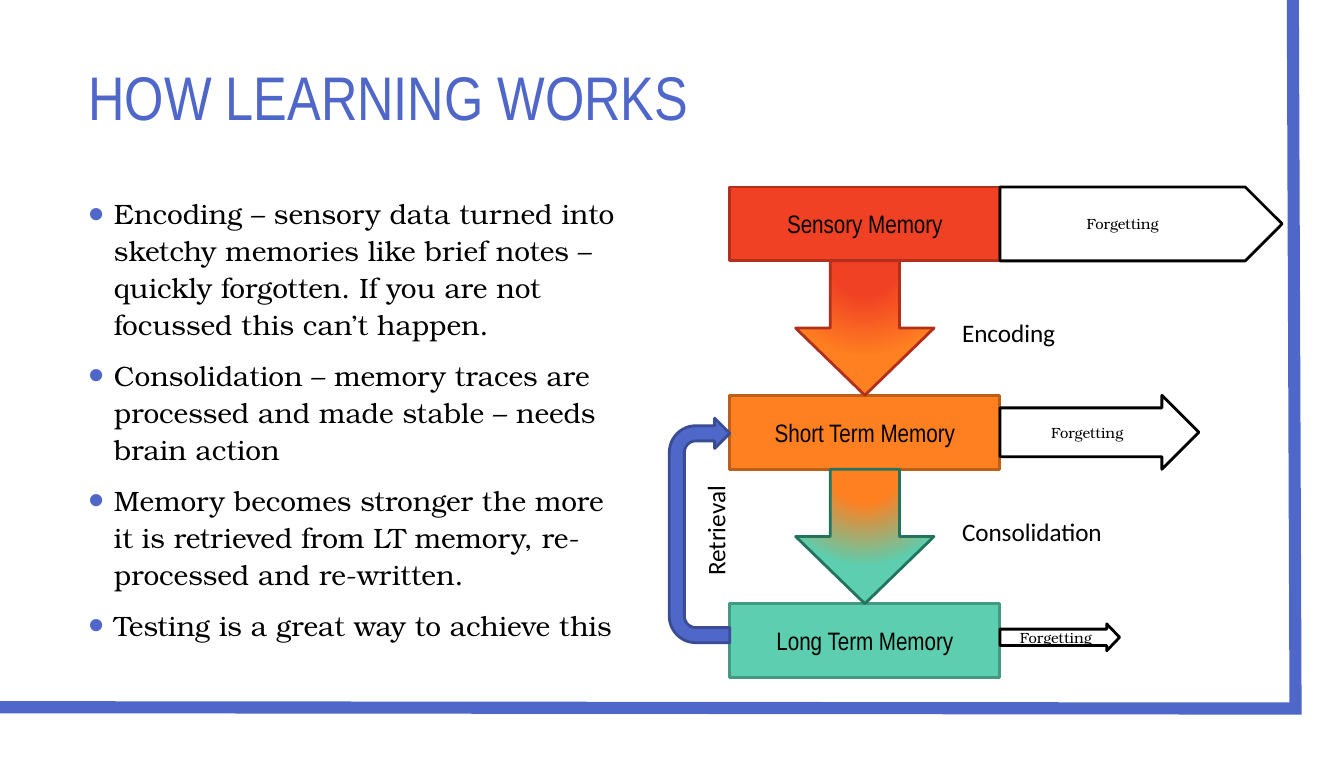
from pptx import Presentation
from pptx.dml.color import RGBColor
from pptx.enum.shapes import MSO_SHAPE as Shape
from pptx.enum.text import MSO_ANCHOR as Anchor, PP_ALIGN as Align
from pptx.oxml import parse_xml
from pptx.oxml.ns import nsdecls, qn
from pptx.util import Inches, Pt

BLUE, BLACK, WHITE = "4E67C8", "000000", "FFFFFF"
NARROW, SERIF, SANS = "Arial Narrow", "TeX Gyre Bonum", "Calibri"
LEFT, TOP = 0.56, 1.39
BAR_LEFT, BAR_WIDTH, BAR_HEIGHT, GAP = 5.43, 2.01, 0.55, 1
ROW = BAR_HEIGHT + GAP
BAR_RIGHT = BAR_LEFT + BAR_WIDTH
DOWN_WIDTH = 1.03

deck = Presentation()
deck.slide_width, deck.slide_height = Inches(10), Inches(5.63)
page = deck.slides.add_slide(deck.slide_layouts[6])


def add_box(kind, left, top, width, height, fill=None, line=None):
    place = [Inches(length) for length in (left, top, width, height)]
    if kind is None:
        return page.shapes.add_textbox(*place)
    box = page.shapes.add_shape(kind, *place)
    box.shadow.inherit = False
    box.fill.solid()
    box.fill.fore_color.rgb = RGBColor.from_string(fill)
    box.line.color.rgb = RGBColor.from_string(line)
    box.line.width = Pt(1.5)
    return box


def write(box, text, size, font, color=BLACK, align=Align.LEFT, anchor=Anchor.TOP, wrap=True):
    frame = box.text_frame
    frame.text = text
    frame.word_wrap = wrap
    frame.vertical_anchor = anchor
    for para in frame.paragraphs:
        para.alignment = align
        for span in para.runs:
            span.font.size = Pt(size)
            span.font.name = font
            span.font.color.rgb = RGBColor.from_string(color)


builder = page.shapes.build_freeform(Inches(9.62), 0)
builder.add_line_segments([(Inches(9.64), Inches(5.27)), (Inches(-0.02), Inches(5.26))], close=False)
border = builder.convert_to_shape()
border.shadow.inherit = False
border.fill.background()
border.line.color.rgb = RGBColor.from_string(BLUE)
border.line.width = Pt(6.5)
border.line._get_or_add_ln().append(parse_xml(f'<a:miter {nsdecls("a")} lim="800000"/>'))

title = add_box(None, LEFT, 0.27, 8.53, 0.95)
write(title, "HOW LEARNING WORKS", 33, NARROW, BLUE, anchor=Anchor.MIDDLE)
title.text_frame.paragraphs[0].line_spacing = 0.9

points = [
    "Encoding – sensory data turned into sketchy memories like brief notes – quickly forgotten. If you are not focussed this can’t happen.",
    "Consolidation – memory traces are processed and made stable – needs brain action",
    "Memory becomes stronger the more it is retrieved from LT memory, re-processed and re-written.",
    "Testing is a great way to achieve this",
]
body = add_box(None, LEFT, TOP, 4.17, 3.66)
write(body, "\n".join(points), 15, SERIF)
for index, para in enumerate(body.text_frame.paragraphs):
    para.line_spacing = 1.1
    para.space_before = Pt(7.5 if index else 0)
    props = para._p.get_or_add_pPr()
    props.set("marL", str(Inches(0.19)))
    props.set("indent", str(Inches(-0.19)))
    for bullet in (
        f'<a:buClr {nsdecls("a")}><a:srgbClr val="{BLUE}"/></a:buClr>',
        f'<a:buSzPct {nsdecls("a")} val="160000"/>',
        f'<a:buFont {nsdecls("a")} typeface="Arial"/>',
        f'<a:buChar {nsdecls("a")} char="•"/>',
    ):
        props.append(parse_xml(bullet))

memories = [
    ("Sensory Memory", "F14124", "B2301B"),
    ("Short Term Memory", "FF8021", "BD5F18"),
    ("Long Term Memory", "5DCEAF", "459881"),
]
for row, (label, fill, line) in enumerate(memories):
    bar = add_box(Shape.RECTANGLE, BAR_LEFT, TOP + row * ROW, BAR_WIDTH, BAR_HEIGHT, fill, line)
    write(bar, label, 13.5, NARROW, align=Align.CENTER, anchor=Anchor.MIDDLE)

for row, line in enumerate(("B2301B", "23735D")):
    start, end = memories[row][1], memories[row + 1][1]
    left = BAR_LEFT + (BAR_WIDTH - DOWN_WIDTH) / 2
    arrow = add_box(Shape.DOWN_ARROW, left, TOP + row * ROW + BAR_HEIGHT, DOWN_WIDTH, GAP, start, line)
    stops = "".join(
        f'<a:gs pos="{share * 1000}"><a:srgbClr val="{color}"/></a:gs>'
        for share, color in ((0, start), (35, start), (100, end))
    )
    solid = arrow._element.spPr.find(qn("a:solidFill"))
    solid.getparent().replace(solid, parse_xml(
        f'<a:gradFill {nsdecls("a")} rotWithShape="1"><a:gsLst>{stops}</a:gsLst>'
        '<a:path path="circle"><a:fillToRect l="50000" t="-80000" r="50000" b="180000"/></a:path></a:gradFill>'
    ))

for top, width, height, shaft, head in (
    (TOP, 2.1, BAR_HEIGHT, 1, 0.5),
    (TOP + ROW, 1.48, BAR_HEIGHT, 0.66, 0.5),
    (4.64, 0.89, 0.2, 0.61, 0.48),
):
    arrow = add_box(Shape.RIGHT_ARROW, BAR_RIGHT, top, width, height, WHITE, BLACK)
    arrow.adjustments[0], arrow.adjustments[1] = shaft, head
    write(arrow, "Forgetting", 7.9, SERIF, align=Align.CENTER, anchor=Anchor.MIDDLE)
    arrow.text_frame.margin_left = arrow.text_frame.margin_right = 0

loop = add_box(Shape.U_TURN_ARROW, 4.37, 3.72, 1.67, 0.45, BLUE, "3A4C94")
loop.rotation = 270
for index, share in enumerate((0.25, 0.25, 0.25, 0.44, 1)):
    loop.adjustments[index] = share

for label, left, top, width, turn in (
    ("Consolidation", 7.06, 3.79, 1.26, 0),
    ("Encoding", 7.06, 2.31, 0.91, 0),
    ("Retrieval", 4.88, 3.77, 0.89, 270),
):
    caption = add_box(None, left, top, width, 0.33)
    caption.rotation = turn
    write(caption, label, 13.5, SANS, wrap=False)

deck.save("out.pptx")
